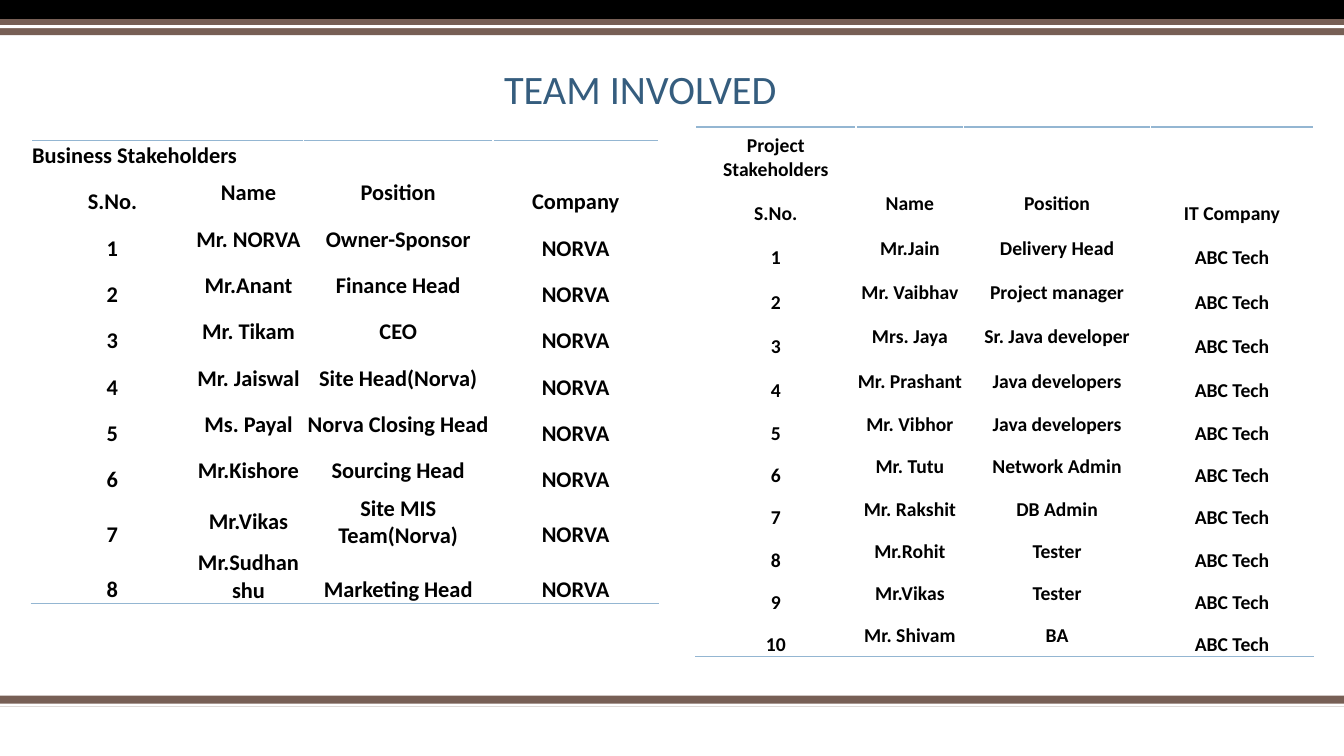
from dataclasses import dataclass

from lxml import etree
from pptx import Presentation
from pptx.dml.color import RGBColor
from pptx.enum.shapes import MSO_SHAPE
from pptx.enum.text import MSO_ANCHOR, PP_ALIGN
from pptx.oxml.ns import qn
from pptx.util import Inches, Pt

RECTANGLE = MSO_SHAPE.RECTANGLE
MIDDLE, BOTTOM = MSO_ANCHOR.MIDDLE, MSO_ANCHOR.BOTTOM
LEFT, CENTER = PP_ALIGN.LEFT, PP_ALIGN.CENTER


@dataclass(frozen=True)
class Theme:
    font: str = "Calibri"
    title: str = "355D7E"
    text: str = "000000"
    brown: str = "775F55"
    black: str = "000000"
    white: str = "FFFFFF"
    rule: str = "94B6D2"
    title_size: float = 28.8
    business_size: int = 16
    project_size: int = 14


theme = Theme()


def style_paragraph(paragraph, size, color, bold=False):
    paragraph.font.name = theme.font
    paragraph.font.size = Pt(size)
    paragraph.font.bold = bold
    paragraph.font.color.rgb = RGBColor.from_string(color)


def add_rule(cell, side):
    """Draw a 1 pt line on one side of a cell: "lnT" or "lnB"."""
    line = etree.Element(qn("a:" + side), w=str(Pt(1)))
    fill = etree.SubElement(line, qn("a:solidFill"))
    etree.SubElement(fill, qn("a:srgbClr"), val=theme.rule)
    cell._tc.get_or_add_tcPr().insert(0, line)


deck = Presentation()
deck.slide_width = Inches(13.33)
deck.slide_height = Inches(7.5)
page = deck.slides.add_slide(deck.slide_layouts[6])

# Bands across the top and bottom: top, height, colour
bands = [
    (6.9, 0.11, theme.brown),
    (6.98, 0.03, theme.white),
    (0, 0.19, theme.black),
    (0.19, 0.16, theme.brown),
    (0.25, 0.03, theme.white),
]
for top, height, color in bands:
    band = page.shapes.add_shape(RECTANGLE, 0, Inches(top), deck.slide_width, Inches(height))
    band.shadow.inherit = False
    band.fill.solid()
    band.fill.fore_color.rgb = RGBColor.from_string(color)
    band.line.fill.background()

# Title
title = page.shapes.add_textbox(Inches(1.9), Inches(0.68), Inches(10), Inches(0.49))
title.text_frame.word_wrap = True
title.text_frame.vertical_anchor = BOTTOM
title.text_frame.margin_left = Inches(3.1)
title_para = title.text_frame.paragraphs[0]
title_para.text = "TEAM INVOLVED"
title_para.line_spacing = 0.9
style_paragraph(title_para, theme.title_size, theme.title)

# Stakeholder tables
business_people = [
    ("Mr. NORVA", "Owner-Sponsor"),
    ("Mr.Anant", "Finance Head"),
    ("Mr. Tikam", "CEO"),
    ("Mr. Jaiswal", "Site Head(Norva)"),
    ("Ms. Payal", "Norva Closing Head"),
    ("Mr.Kishore", "Sourcing Head"),
    ("Mr.Vikas", "Site MIS Team(Norva)"),
    ("Mr.Sudhanshu", "Marketing Head"),
]
project_people = [
    ("Mr.Jain", "Delivery Head"),
    ("Mr. Vaibhav", "Project manager"),
    ("Mrs. Jaya", "Sr. Java developer"),
    ("Mr. Prashant", "Java developers"),
    ("Mr. Vibhor", "Java developers"),
    ("Mr. Tutu", "Network Admin"),
    ("Mr. Rakshit", "DB Admin"),
    ("Mr.Rohit", "Tester"),
    ("Mr.Vikas", "Tester"),
    ("Mr. Shivam", "BA"),
]
teams = [
    dict(heading="Business Stakeholders", heading_span=2, heading_align=LEFT,
         company_label="Company", company="NORVA", people=business_people,
         left=0.31, top=1.39, size=theme.business_size, last_anchor=BOTTOM,
         widths=[1.61, 1.09, 1.88, 1.64], heights=[0.29] + [0.46] * 8 + [0.44]),
    dict(heading="Project Stakeholders", heading_span=1, heading_align=CENTER,
         company_label="IT Company", company="ABC Tech", people=project_people,
         left=6.9, top=1.26, size=theme.project_size, last_anchor=MIDDLE,
         widths=[1.59, 1.07, 1.85, 1.62], heights=[0.54] + [0.44] * 5 + [0.42] * 6),
]
for team in teams:
    rows = [(team["heading"], "", "", ""), ("S.No.", "Name", "Position", team["company_label"])]
    for number, (name, position) in enumerate(team["people"], start=1):
        rows.append((str(number), name, position, team["company"]))
    widths, heights = team["widths"], team["heights"]
    table = page.shapes.add_table(
        len(rows), len(widths), Inches(team["left"]), Inches(team["top"]),
        Inches(sum(widths)), Inches(sum(heights))).table
    table.first_row = False
    table.horz_banding = False
    for column, width in zip(table.columns, widths):
        column.width = Inches(width)

    last_row = len(rows) - 1
    for row_index, values in enumerate(rows):
        table.rows[row_index].height = Inches(heights[row_index])
        for column_index, value in enumerate(values):
            cell = table.cell(row_index, column_index)
            cell.fill.background()
            cell.margin_left = cell.margin_right = cell.margin_top = Inches(0.01)
            cell.margin_bottom = 0
            cell.vertical_anchor = BOTTOM
            if column_index in (1, 2) and row_index > 0:
                cell.vertical_anchor = team["last_anchor"] if row_index == last_row else MIDDLE
            para = cell.text_frame.paragraphs[0]
            para.text = value
            para.alignment = team["heading_align"] if row_index == 0 else CENTER
            style_paragraph(para, team["size"], theme.text, bold=True)
            if row_index == 0:
                add_rule(cell, "lnT")
            if row_index == last_row:
                add_rule(cell, "lnB")
    if team["heading_span"] > 1:
        table.cell(0, 0).merge(table.cell(0, team["heading_span"] - 1))

deck.save("out.pptx")
